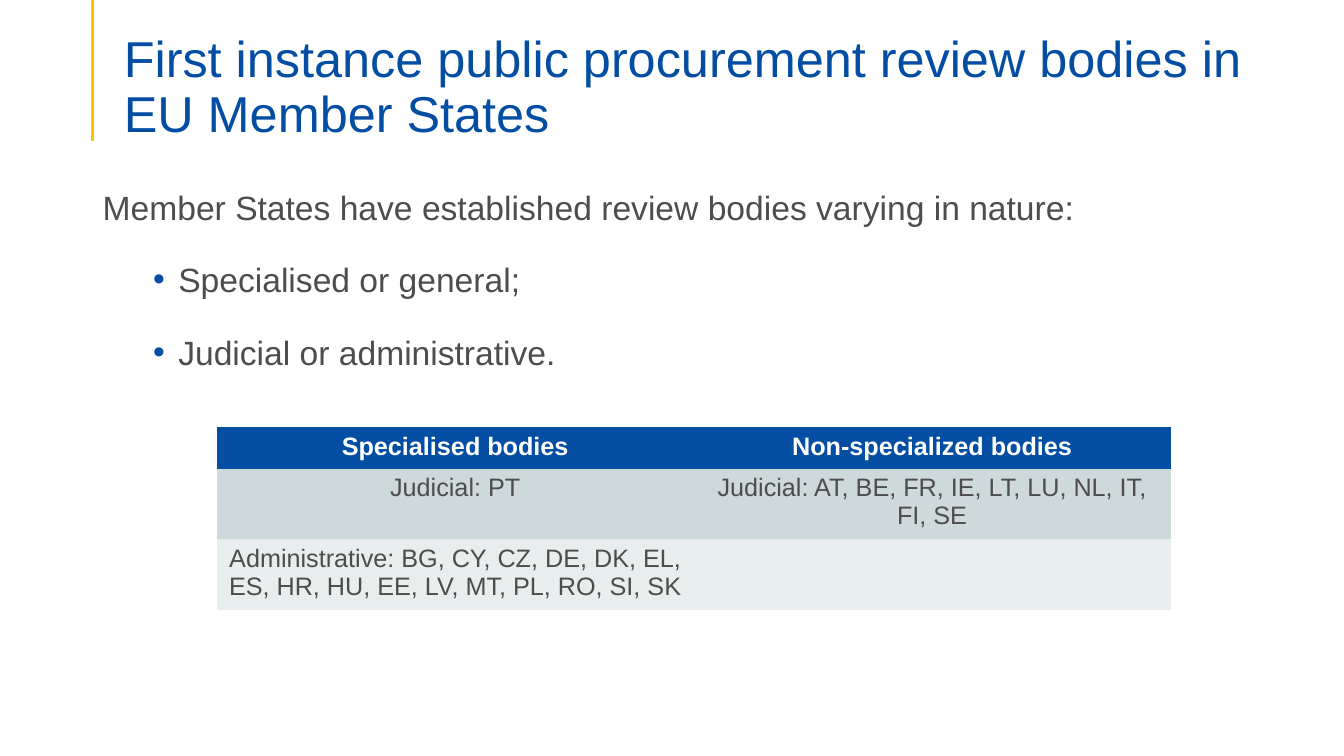
from lxml.etree import SubElement
from pptx import Presentation
from pptx.dml.color import RGBColor
from pptx.enum.shapes import MSO_CONNECTOR
from pptx.enum.text import MSO_ANCHOR, PP_ALIGN
from pptx.oxml.ns import qn
from pptx.util import Inches, Pt

COLOURS = {
    "blue": "034EA2",
    "gold": "FFC000",
    "text": "4D4D4D",
    "white": "FFFFFF",
    "grey": "CDD9DA",
    "pale": "E8EDEE",
}
NO_GRID_STYLE = "{2D5ABB26-0587-4C30-8999-92F81FD0307C}"
INTRODUCTION = "Member States have established review bodies varying in nature:"
BULLETS = ["Specialised or general;", "Judicial or administrative."]
REVIEW_BODIES = [
    ["Specialised bodies", "Non-specialized bodies"],
    ["Judicial: PT", "Judicial: AT, BE, FR, IE, LT, LU, NL, IT, FI, SE"],
    ["Administrative: BG, CY, CZ, DE, DK, EL, ES, HR, HU, EE, LV, MT, PL, RO, SI, SK", ""],
]


def colour(name):
    """Return the named colour."""
    return RGBColor.from_string(COLOURS[name])


def set_font(paragraph, size, colour_name, bold=False):
    """Set the font of a whole paragraph."""
    font = paragraph.font
    font.name = "Arial"
    font.size = Pt(size)
    font.bold = bold
    font.color.rgb = colour(colour_name)


def add_text_frame(slide, left, top, width, height):
    """Add a wrapping text box and return its text frame."""
    box = slide.shapes.add_textbox(Inches(left), Inches(top), Inches(width), Inches(height))
    box.text_frame.word_wrap = True
    return box.text_frame


def add_bullet(paragraph):
    """Give a paragraph a blue bullet and a hanging indent."""
    properties = paragraph._p.get_or_add_pPr()
    properties.set("marL", str(Inches(0.75)))
    properties.set("indent", str(Inches(-0.25)))
    bullet_colour = SubElement(properties, qn("a:buClr"))
    SubElement(bullet_colour, qn("a:srgbClr"), val=COLOURS["blue"])
    SubElement(properties, qn("a:buFont"), typeface="Arial")
    SubElement(properties, qn("a:buChar"), char="•")


def add_accent_line(slide):
    """Draw the vertical gold line beside the title."""
    line = slide.shapes.add_connector(
        MSO_CONNECTOR.STRAIGHT, Inches(0.92), Inches(0), Inches(0.92), Inches(1.4))
    line.line.color.rgb = colour("gold")
    line.line.width = Pt(2.25)
    SubElement(line._element.spPr, qn("a:effectLst"))


def add_title(slide, text):
    """Add the slide title, anchored at the bottom."""
    frame = add_text_frame(slide, 1.13, 0.2, 11.5, 1.22)
    frame.vertical_anchor = MSO_ANCHOR.BOTTOM
    frame.margin_bottom = Inches(0)
    paragraph = frame.paragraphs[0]
    paragraph.text = text
    paragraph.line_spacing = 0.9
    set_font(paragraph, 36, "blue")


def add_body(slide, introduction, bullets):
    """Add the introduction and its bullet list."""
    frame = add_text_frame(slide, 0.92, 1.8, 11.93, 4.25)
    paragraph = frame.paragraphs[0]
    paragraph.text = introduction
    paragraph.space_after = Pt(18)
    set_font(paragraph, 24, "text")
    for bullet in bullets:
        paragraph = frame.add_paragraph()
        paragraph.text = bullet
        paragraph.level = 1
        paragraph.space_before = Pt(5)
        paragraph.space_after = Pt(18)
        add_bullet(paragraph)
        set_font(paragraph, 24, "text")


def add_review_table(slide, rows):
    """Add the table of review bodies with one fill per row."""
    frame = slide.shapes.add_table(
        len(rows), len(rows[0]), Inches(2.15), Inches(4.24), Inches(9.46), Inches(1.23))
    table = frame.table
    table._tbl.tblPr.find(qn("a:tableStyleId")).text = NO_GRID_STYLE
    for row_index, (texts, fill) in enumerate(zip(rows, ["blue", "grey", "pale"])):
        is_header = row_index == 0
        for column_index, text in enumerate(texts):
            cell = table.cell(row_index, column_index)
            cell.fill.solid()
            cell.fill.fore_color.rgb = colour(fill)
            cell.text = text
            paragraph = cell.text_frame.paragraphs[0]
            paragraph.alignment = PP_ALIGN.CENTER
            set_font(paragraph, 18, "white" if is_header else "text", is_header)


def main():
    """Build and save the slide."""
    presentation = Presentation()
    presentation.slide_width = Inches(13.33)
    presentation.slide_height = Inches(7.5)
    slide = presentation.slides.add_slide(presentation.slide_layouts[6])
    add_accent_line(slide)
    add_body(slide, INTRODUCTION, BULLETS)
    add_title(slide, "First instance public procurement review bodies in EU Member States")
    add_review_table(slide, REVIEW_BODIES)
    presentation.save("out.pptx")


if __name__ == "__main__":
    main()
